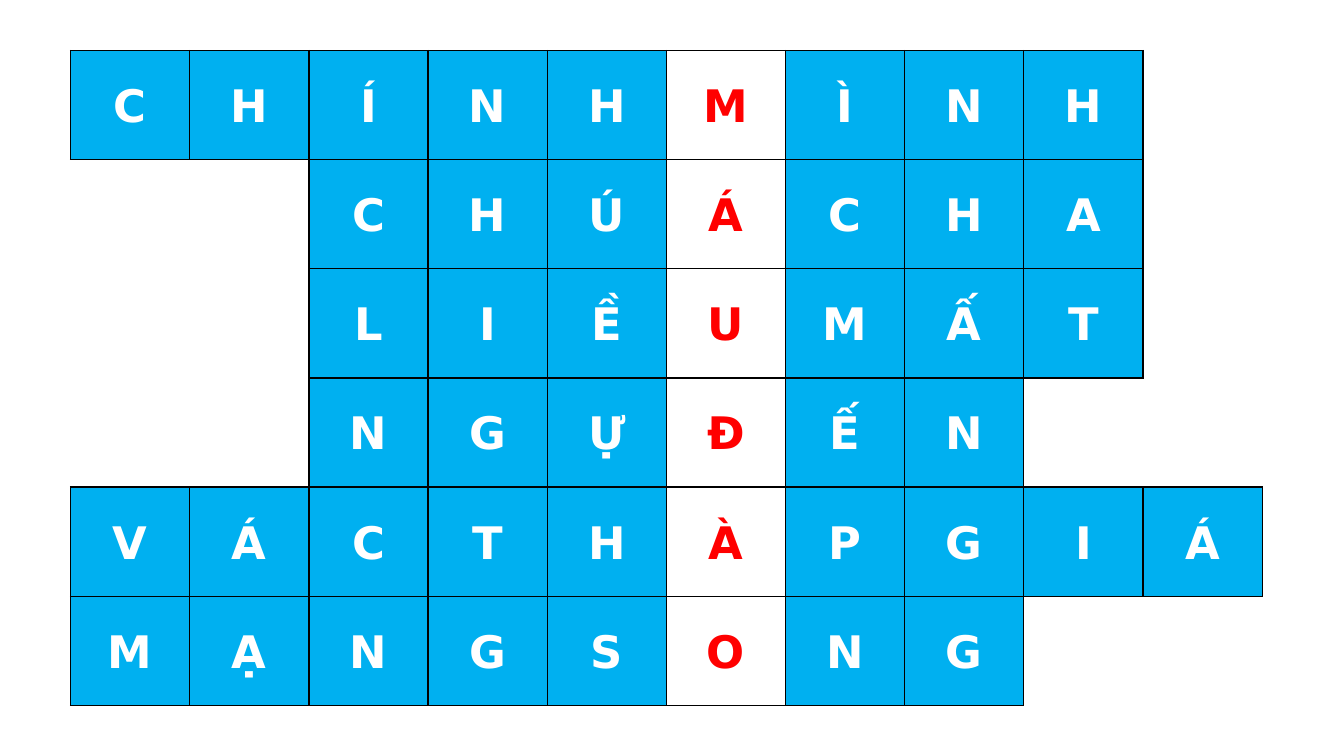
from lxml import etree
from pptx import Presentation
from pptx.dml.color import RGBColor
from pptx.enum.text import MSO_ANCHOR, PP_ALIGN
from pptx.oxml.ns import qn
from pptx.util import Inches, Pt

ANSWERS = [
    (0, "CHÍNHMÌNH"),
    (2, "CHÚÁCHA"),
    (2, "LIỀUMẤT"),
    (2, "NGỰĐẾN"),
    (0, "VÁCTHÀPGIÁ"),
    (0, "MẠNGSONG"),
]
KEY_COLUMN = 5
COLUMNS = 10
ROWS = len(ANSWERS)

BLUE = RGBColor(0x00, 0xB0, 0xF0)
WHITE = RGBColor(0xFF, 0xFF, 0xFF)
RED = RGBColor(0xFF, 0x00, 0x00)
BLACK = RGBColor(0x00, 0x00, 0x00)
CENTER = PP_ALIGN.CENTER
MIDDLE = MSO_ANCHOR.MIDDLE
FONT = "DejaVu Sans"

SLIDE_WIDTH, SLIDE_HEIGHT = Inches(13.33), Inches(7.5)
GRID_LEFT, GRID_TOP = Inches(0.7), Inches(0.5)
GRID_WIDTH, GRID_HEIGHT = Inches(11.82), Inches(6.5)
SIDES = {"a:lnL": (0, -1), "a:lnR": (0, 1), "a:lnT": (-1, 0), "a:lnB": (1, 0)}

LETTERS = {
    (row, start + offset): letter
    for row, (start, word) in enumerate(ANSWERS)
    for offset, letter in enumerate(word)
}


def draw_borders(cell, row, column):
    properties = cell._tc.get_or_add_tcPr()
    for side, (down, across) in SIDES.items():
        border = etree.SubElement(properties, qn(side), w=str(Pt(1)))
        if (row, column) in LETTERS or (row + down, column + across) in LETTERS:
            paint = etree.SubElement(border, qn("a:solidFill"))
            etree.SubElement(paint, qn("a:srgbClr"), val=str(BLACK))
        else:
            etree.SubElement(border, qn("a:noFill"))


def write_letter(cell, letter, is_key):
    cell.fill.solid()
    cell.fill.fore_color.rgb = WHITE if is_key else BLUE
    cell.vertical_anchor = MIDDLE
    cell.margin_left = cell.margin_right = Inches(0.07)
    cell.margin_top = cell.margin_bottom = 0
    cell.text = letter
    paragraph = cell.text_frame.paragraphs[0]
    paragraph.alignment = CENTER
    paragraph.line_spacing = 1.07
    paragraph.space_after = Pt(8)
    paragraph.font.name = FONT
    paragraph.font.size = Pt(32)
    paragraph.font.bold = True
    paragraph.font.color.rgb = RED if is_key else WHITE


def main():
    deck = Presentation()
    deck.slide_width, deck.slide_height = SLIDE_WIDTH, SLIDE_HEIGHT
    slide = deck.slides.add_slide(deck.slide_layouts[6])
    crossword = slide.shapes.add_table(
        ROWS, COLUMNS, GRID_LEFT, GRID_TOP, GRID_WIDTH, GRID_HEIGHT
    ).table
    crossword.first_row = False
    crossword.horz_banding = False
    for row in range(ROWS):
        for column in range(COLUMNS):
            cell = crossword.cell(row, column)
            draw_borders(cell, row, column)
            if (row, column) in LETTERS:
                write_letter(cell, LETTERS[row, column], column == KEY_COLUMN)
            else:
                cell.fill.background()
    deck.save("out.pptx")


if __name__ == "__main__":
    main()
